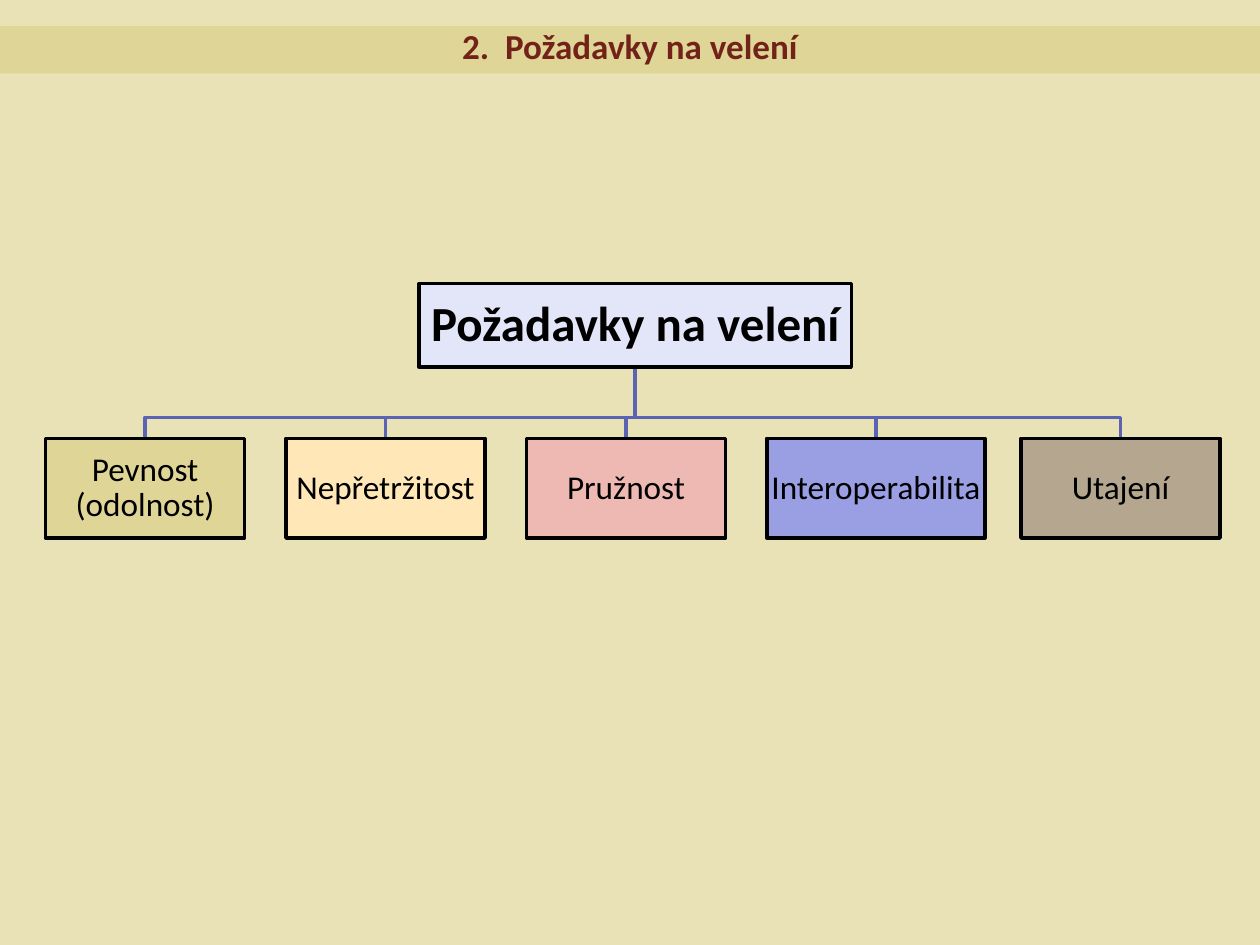
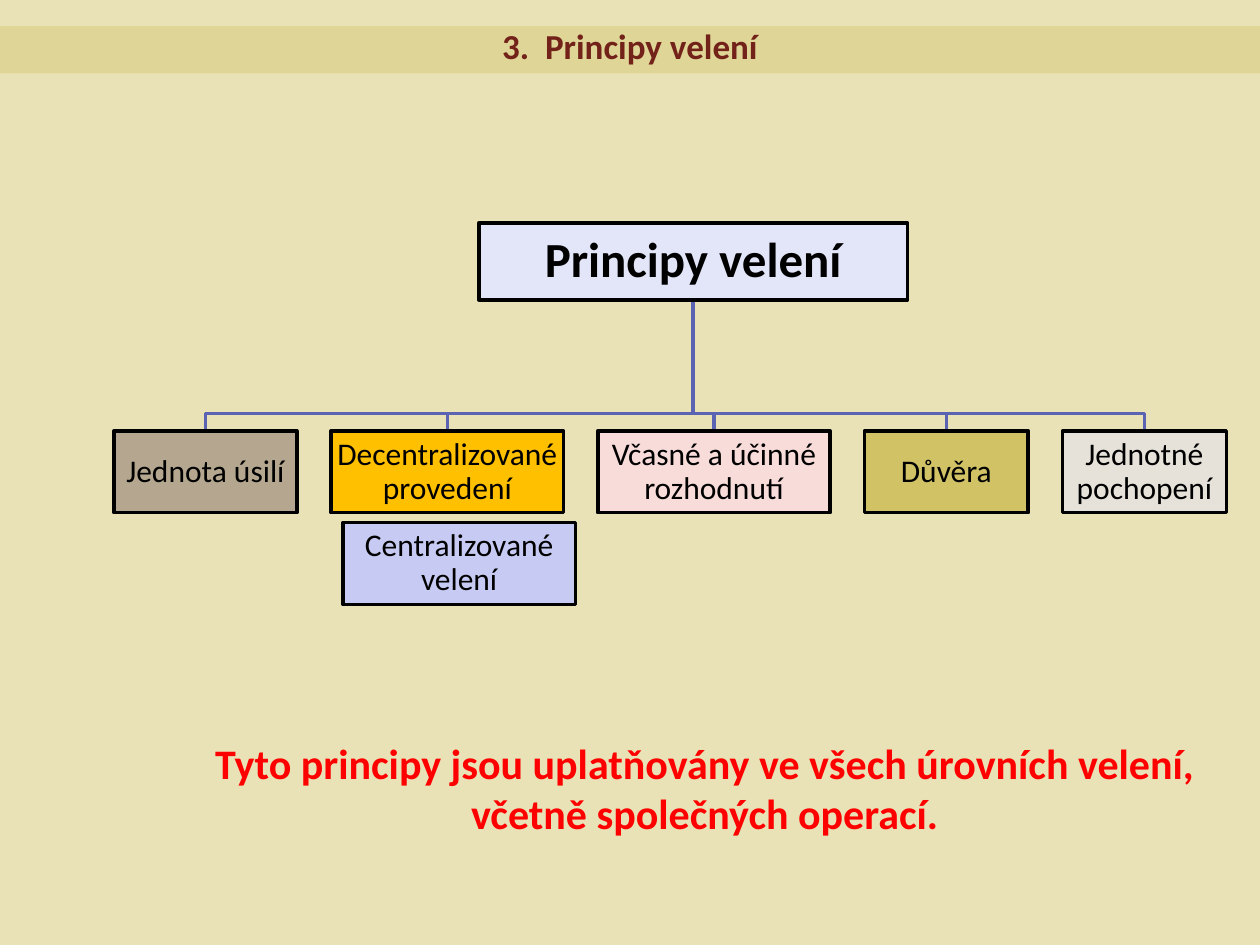
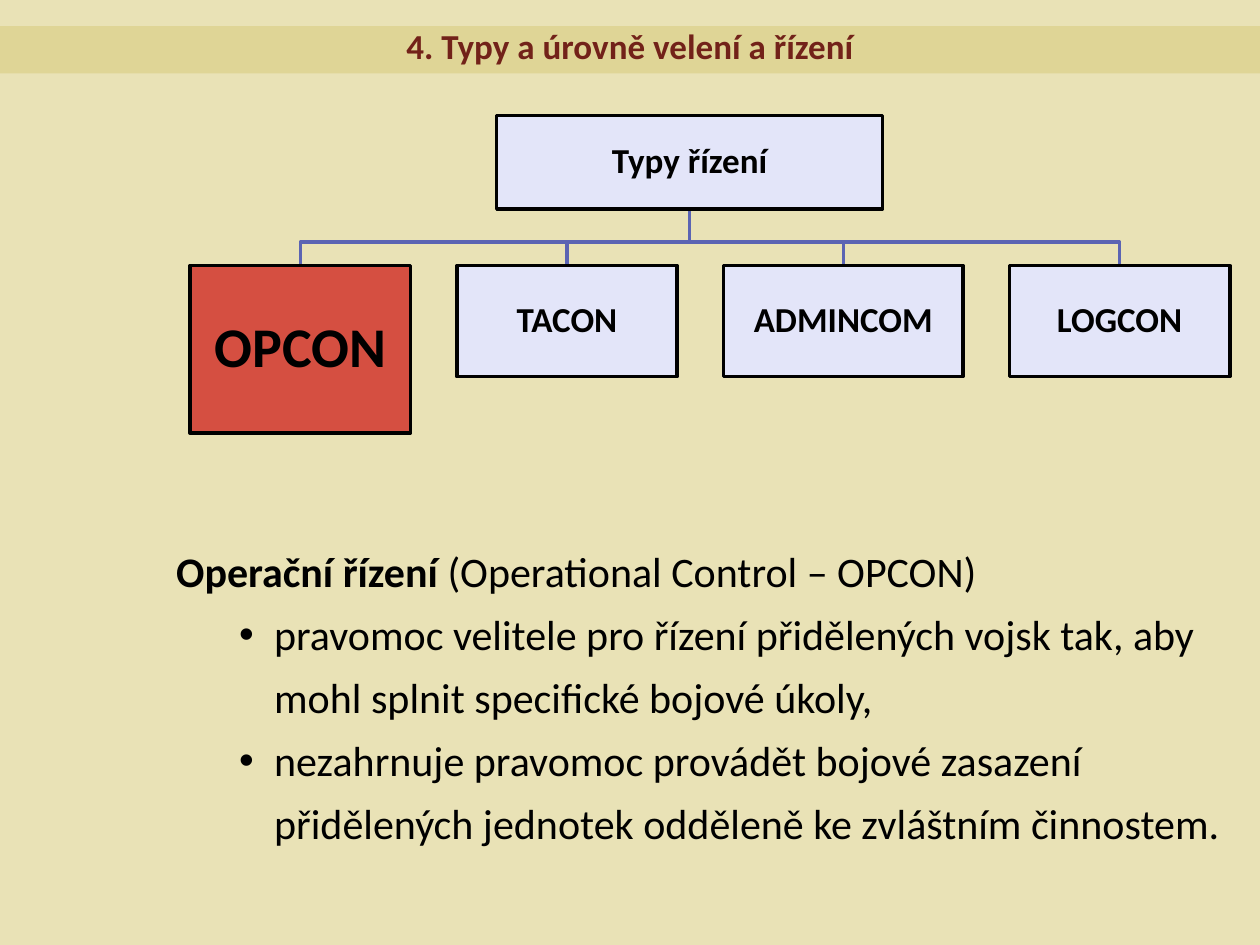
from dataclasses import dataclass

from lxml.etree import SubElement
from pptx import Presentation
from pptx.dml.color import RGBColor
from pptx.enum.shapes import MSO_SHAPE
from pptx.enum.text import MSO_ANCHOR, MSO_AUTO_SIZE, PP_ALIGN
from pptx.oxml.ns import qn
from pptx.util import Pt

# Shared look
FONT = "Calibri"
PAGE, BAND, TITLE = "E9E2B6", "DFD596", "722219"
INK, RED, LINK = "000000", "FF0000", "5B64B3"
PALE, SAND, BRICK = "E3E5F9", "B5A78F", "D54F41"
WIDE, HIGH = 720, 540


@dataclass
class Node:
    text: str
    fill: str
    width: float
    height: float
    size: float
    bold: bool = False
    nudge: float = 0


def color(code):
    return RGBColor.from_string(code)


def style(para, size, code=INK, bold=False, align=None, space=None):
    para.alignment = align
    para.line_spacing = space
    for run in para.runs:
        font = run.font
        font.name, font.size, font.bold = FONT, Pt(size), bold
        font.color.rgb = color(code)


def inset(frame, side, top):
    frame.margin_left = frame.margin_right = Pt(side)
    frame.margin_top = frame.margin_bottom = Pt(top)


def place(shape, left, top, width, height):
    shape.left, shape.top = Pt(left), Pt(top)
    shape.width, shape.height = Pt(width), Pt(height)


def outline(shape, code):
    shape.line.color.rgb = color(code)
    shape.line.width = Pt(2)
    shape.shadow.inherit = False


# Slide with its title band
def add_page(deck, text):
    slide = deck.slides.add_slide(deck.slide_layouts[5])
    title = slide.shapes.title
    place(title, 0, 15, WIDE, 27)
    title.fill.solid()
    title.fill.fore_color.rgb = color(BAND)
    frame = title.text_frame
    frame.text = text
    frame.auto_size = MSO_AUTO_SIZE.NONE
    frame.vertical_anchor = MSO_ANCHOR.MIDDLE
    inset(frame, 7.2, 3.6)
    style(frame.paragraphs[0], 20, TITLE, True, PP_ALIGN.CENTER, 0.8)
    return slide


# One framed node of a tree
def add_node(slide, node, left, top):
    shape = slide.shapes.add_shape(
        MSO_SHAPE.RECTANGLE, Pt(left), Pt(top), Pt(node.width), Pt(node.height))
    shape.fill.solid()
    shape.fill.fore_color.rgb = color(node.fill)
    outline(shape, INK)
    frame = shape.text_frame
    frame.text = node.text
    frame.word_wrap = True
    frame.vertical_anchor = MSO_ANCHOR.MIDDLE
    inset(frame, 0.7, 0.7)
    style(frame.paragraphs[0], node.size, INK, node.bold, PP_ALIGN.CENTER, 0.9)


# Elbow from the root down to a leaf
def add_link(slide, start, end, bend):
    pen = slide.shapes.build_freeform(Pt(start[0]), Pt(start[1]))
    turns = [(start[0], bend), (end[0], bend), end]
    pen.add_line_segments([(Pt(x), Pt(y)) for x, y in turns], close=False)
    link = pen.convert_to_shape()
    link.fill.background()
    outline(link, LINK)


# Tree: root at the top of the box, leaves in a row from its left edge
def add_tree(slide, left, top, root, shift, leaves, drop, gap, stub):
    row = top + drop
    start = (left + shift + root.width / 2, top + root.height)
    spots, x = [], left
    for leaf in leaves:
        x += leaf.nudge
        spots.append(x)
        x += leaf.width + gap
    for leaf, spot in zip(leaves, spots):
        add_link(slide, start, (spot + leaf.width / 2, row), row - stub)
    add_node(slide, root, left + shift, top)
    for leaf, spot in zip(leaves, spots):
        add_node(slide, leaf, spot, row)


def add_box(slide, left, top, width, height):
    box = slide.shapes.add_textbox(Pt(left), Pt(top), Pt(width), Pt(height))
    box.text_frame.word_wrap = True
    return box.text_frame


# Centred closing remark
def add_note(slide, text, *area):
    frame = add_box(slide, *area)
    frame.text = text
    style(frame.paragraphs[0], 24, RED, True, PP_ALIGN.CENTER)


# Term with bulleted points
def add_term(slide, term, gloss, points, *area):
    frame = add_box(slide, *area)
    head = frame.paragraphs[0]
    head.text = term + " "
    head.add_run().text = gloss
    style(head, 24, bold=True, space=1.25)
    head.runs[1].font.bold = False
    for point in points:
        para = frame.add_paragraph()
        para.text = point
        para.level = 1
        props = para._p.get_or_add_pPr()
        props.set("marL", str(Pt(56)))
        props.set("indent", str(Pt(-20)))
        style(para, 24, space=1.25)
        SubElement(props, qn("a:buFont")).set("typeface", "Arial")
        SubElement(props, qn("a:buChar")).set("char", "•")


def add_needs(deck):
    slide = add_page(deck, "2.  Požadavky na velení")
    items = [
        ("Pevnost (odolnost)", BAND, 113.8, 0),
        ("Nepřetržitost", "FFE7B8", 113.8, 0),
        ("Pružnost", "EEB9B3", 113.8, 0),
        ("Interoperabilita", "9A9FE4", 124.6, 0),
        ("Utajení", SAND, 113.8, -3),
    ]
    leaves = [Node(text, fill, width, 57, 19, nudge=nudge)
              for text, fill, width, nudge in items]
    root = Node("Požadavky na velení", PALE, 247, 47.7, 28, True)
    add_tree(slide, 26, 162, root, 213.5, leaves, drop=88.5, gap=23.6, stub=12)


def add_rules(deck):
    slide = add_page(deck, "3.  Principy velení")
    items = [
        ("Jednota úsilí", SAND, 104.4),
        ("Decentralizované provedení", "FFC000", 132.8),
        ("Včasné a účinné rozhodnutí", "F7DCD9", 132.8),
        ("Důvěra", "D1C266", 93.6),
        ("Jednotné pochopení", "E6E2DA", 93.6),
    ]
    leaves = [Node(text, fill, width, 46.8, 18) for text, fill, width in items]
    root = Node("Principy velení", PALE, 245, 44, 28, True)
    add_note(slide, "Tyto principy jsou uplatňovány ve všech úrovních velení, "
             "včetně společných operací.", 105, 417.6, 595.5, 65.5)
    add_tree(slide, 65.2, 127.4, root, 208.4, leaves, drop=118.8, gap=19.6, stub=10)
    add_node(slide, Node("Centralizované velení", "C7CBF3", 132.8, 46.8, 18), 196, 298.6)


def add_types(deck):
    slide = add_page(deck, "4. Typy a úrovně velení a řízení")
    leaves = [
        Node("OPCON", BRICK, 126, 95.8, 32, True),
        Node("TACON", PALE, 126, 63.4, 20, True),
        Node("ADMINCOM", PALE, 137, 63.4, 20, True),
        Node("LOGCON", PALE, 126, 63.4, 20, True),
    ]
    root = Node("Typy řízení", PALE, 220.5, 53.3, 20, True)
    add_tree(slide, 108.6, 66.1, root, 175.2, leaves, drop=85.7, gap=26.4, stub=13.5)
    points = [
        "pravomoc velitele pro řízení přidělených vojsk tak, aby mohl splnit "
        "specifické bojové úkoly,",
        "nezahrnuje pravomoc provádět bojové zasazení přidělených jednotek "
        "odděleně ke zvláštním činnostem.",
    ]
    add_term(slide, "Operační řízení", "(Operational Control – OPCON)", points,
             93.6, 301, 626.4, 189.4)


def main():
    deck = Presentation()
    deck.slide_width, deck.slide_height = Pt(WIDE), Pt(HIGH)
    back = deck.slide_master.background.fill
    back.solid()
    back.fore_color.rgb = color(PAGE)
    add_needs(deck)
    add_rules(deck)
    add_types(deck)
    deck.save("out.pptx")


if __name__ == "__main__":
    main()
